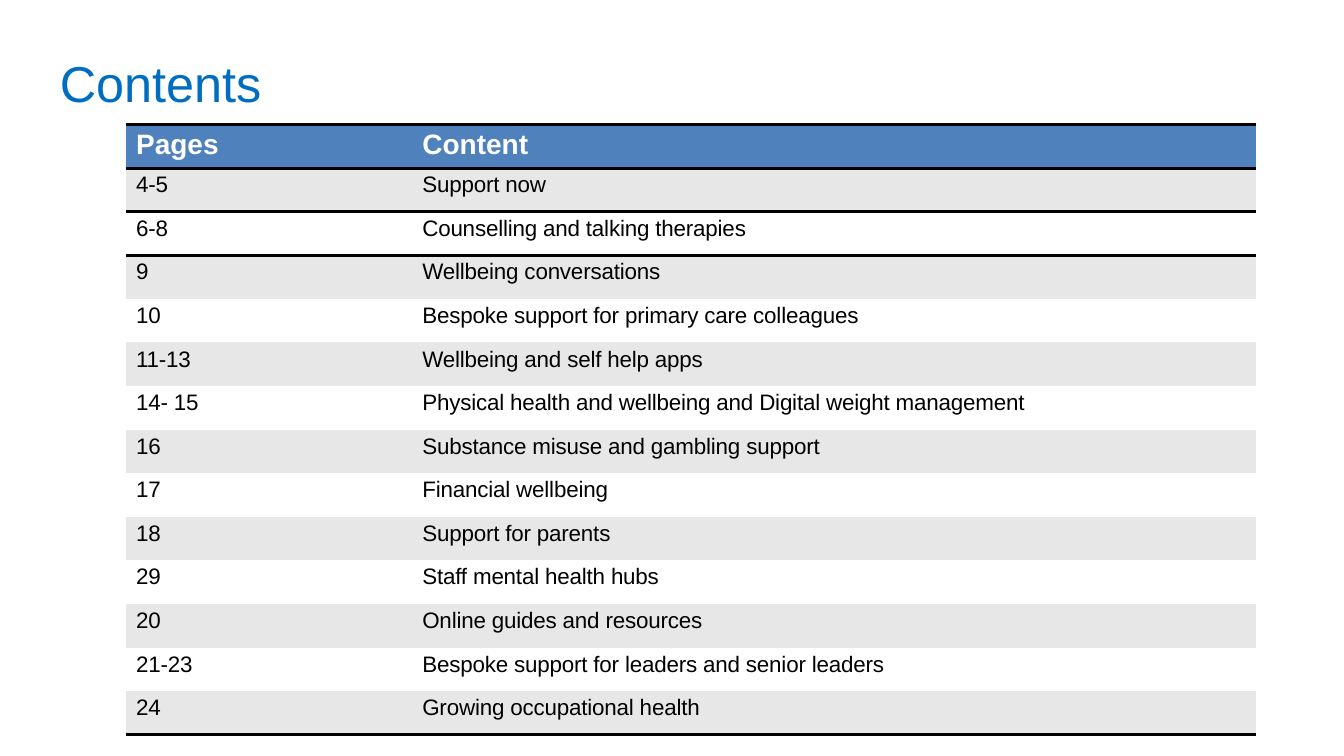
"""Build a contents slide with a two-column table of pages and topics."""
from lxml import etree
from pptx import Presentation
from pptx.dml.color import RGBColor
from pptx.enum import text
from pptx.oxml import ns
from pptx.util import Pt

TITLE_BLUE = RGBColor(0x00, 0x6E, 0xC0)
HEADER_BLUE = RGBColor(0x4F, 0x81, 0xBD)
BAND_GREY = RGBColor(0xE7, 0xE7, 0xE7)
WHITE = RGBColor(0xFF, 0xFF, 0xFF)
BLACK = RGBColor(0, 0, 0)
NO_STYLE = "{2D5ABB26-0587-4C30-8999-92F81FD0307C}"
ROW_HEIGHT = 31.15
COLUMNS = [(139, 7.2), (668.2, 72.7)]
ROWS = [
    ("Pages", "Content"),
    ("4-5", "Support now"),
    ("6-8", "Counselling and talking therapies"),
    ("9", "Wellbeing conversations"),
    ("10", "Bespoke support for primary care colleagues"),
    ("11-13", "Wellbeing and self help apps"),
    ("14- 15", "Physical health and wellbeing and Digital weight management"),
    ("16", "Substance misuse and gambling support"),
    ("17", "Financial wellbeing"),
    ("18", "Support for parents"),
    ("29", "Staff mental health hubs"),
    ("20", "Online guides and resources"),
    ("21-23", "Bespoke support for leaders and senior leaders"),
    ("24", "Growing occupational health"),
]
LAST = len(ROWS) - 1
RULED = {0: ("lnT", "lnB"), 1: ("lnT", "lnB"), 2: ("lnT",), LAST: ("lnB",)}
TITLE_FONT = {"name": "Arial", "size": Pt(36), "bold": False}
HEADER_FONT = {"name": "Arial", "size": Pt(20), "bold": True}
BODY_FONT = {"name": "Arial", "size": Pt(16), "bold": False}


def write(p, words, font, color):
    r = p.add_run()
    r.text = words
    for key, value in font.items():
        setattr(r.font, key, value)
    r.font.color.rgb = color
    return r


def add_rule(cell, side):
    ln = etree.SubElement(cell._tc.get_or_add_tcPr(), ns.qn("a:" + side), w=str(Pt(2.25)))
    fill = etree.SubElement(ln, ns.qn("a:solidFill"))
    etree.SubElement(fill, ns.qn("a:srgbClr"), val=str(BLACK))


prs = Presentation()
prs.slide_width, prs.slide_height = Pt(960), Pt(540)
s = prs.slides.add_slide(prs.slide_layouts[6])

tf = s.shapes.add_textbox(Pt(42), Pt(35.5), Pt(146), Pt(45)).text_frame
margins = {"margin_left": Pt(0.7), "margin_top": Pt(1.5), "margin_right": 0, "margin_bottom": 0}
for key, value in margins.items():
    setattr(tf, key, value)
tf.word_wrap = True
write(tf.paragraphs[0], "Contents", TITLE_FONT, TITLE_BLUE)

width = sum(w for w, indent in COLUMNS)
frame = s.shapes.add_table(len(ROWS), len(COLUMNS), Pt(90), Pt(89), Pt(width), Pt(ROW_HEIGHT * len(ROWS)))
table = frame.table
table.horz_banding = False
table._tbl.tblPr.find(ns.qn("a:tableStyleId")).text = NO_STYLE
for column, (w, indent) in zip(table.columns, COLUMNS):
    column.width = Pt(w)

for i, words in enumerate(ROWS):
    table.rows[i].height = Pt(ROW_HEIGHT)
    for j, (w, indent) in enumerate(COLUMNS):
        cell = table.cell(i, j)
        cell.margin_left, cell.margin_top = Pt(indent), Pt(3.2)
        cell.margin_right = cell.margin_bottom = 0
        cell.vertical_anchor = text.MSO_ANCHOR.TOP
        for side in RULED.get(i, ()):
            add_rule(cell, side)
        if i == 0 or i % 2:
            cell.fill.solid()
            cell.fill.fore_color.rgb = BAND_GREY if i else HEADER_BLUE
        else:
            cell.fill.background()
        p = cell.text_frame.paragraphs[0]
        r = write(p, words[j], BODY_FONT if i else HEADER_FONT, BLACK if i else WHITE)
        if i:
            r.font._element.set("spc", "-10")

prs.save("out.pptx")
